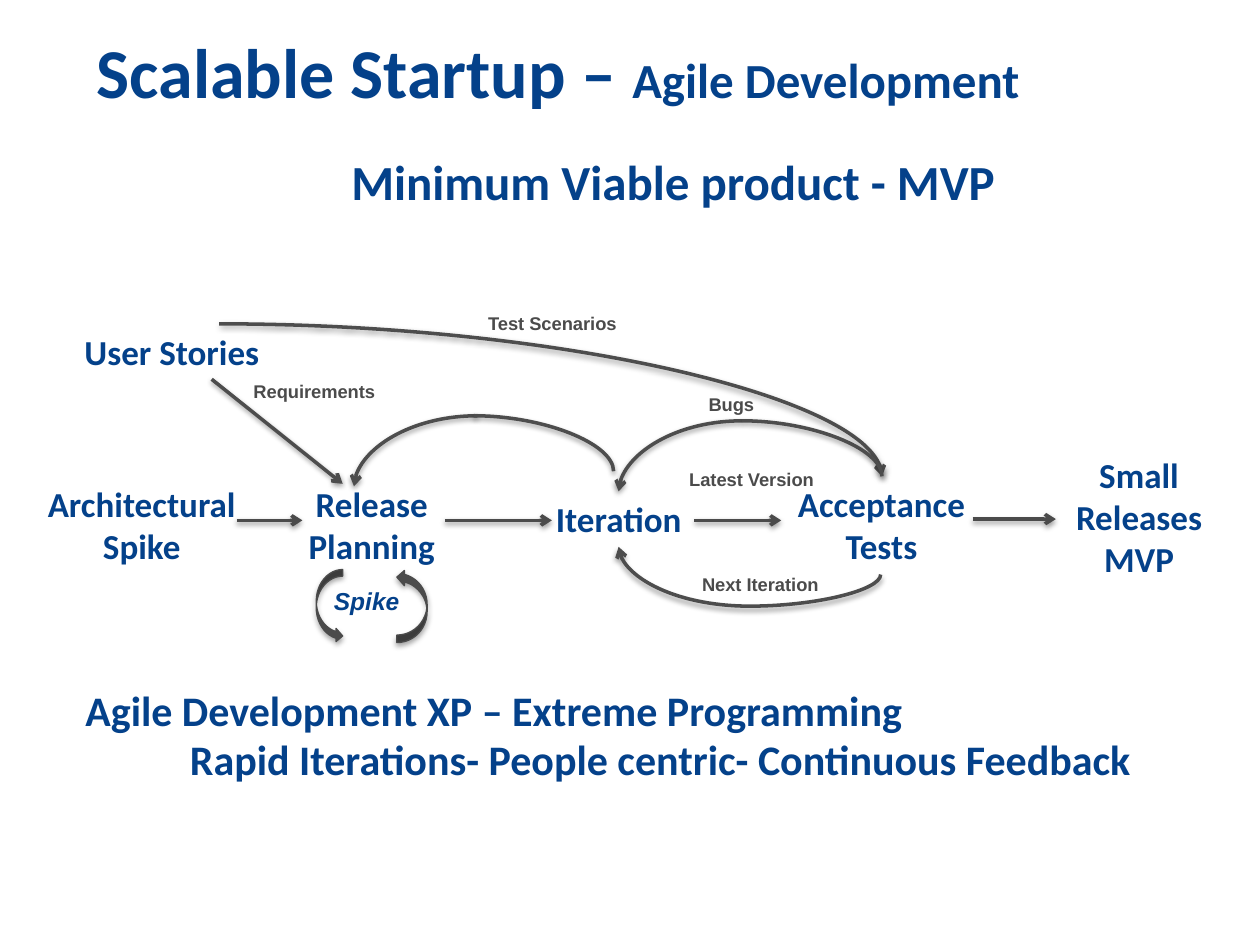
import pptx
import pptx.util
import pptx.dml.color
import pptx.enum.shapes
import pptx.enum.text
import pptx.oxml
import pptx.oxml.ns

Inches, Pt = pptx.util.Inches, pptx.util.Pt
RGB = pptx.dml.color.RGBColor.from_string
SHAPE = pptx.enum.shapes.MSO_SHAPE
LINK = pptx.enum.shapes.MSO_CONNECTOR
ALIGN = pptx.enum.text.PP_ALIGN
ANCHOR = pptx.enum.text.MSO_ANCHOR

HUES = {"blue": "04418A", "gray": "4B4B4B", "line": "4D4D4D", "shade": "000000"}
STEP = {"name": "Calibri", "size": Pt(20), "bold": True}
SPIKE = {"name": "Arial", "size": Pt(14), "bold": True, "italic": True}
NOTE = {"name": "Arial", "size": Pt(10.5), "bold": True}

deck = pptx.Presentation()
deck.slide_width, deck.slide_height = Inches(10), Inches(7.5)
slide = deck.slides.add_slide(deck.slide_layouts[6])
shapes = slide.shapes


def write(para, text, form, hue):
    run = para.add_run()
    run.text = text
    for key, value in form.items():
        setattr(run.font, key, value)
    run.font.color.rgb = RGB(HUES[hue])


def shade(shape, alpha, dist):
    """Give a shape or connector a soft shadow that falls straight down."""
    shape._element.spPr.append(pptx.oxml.parse_xml(
        f'<a:effectLst {pptx.oxml.ns.nsdecls("a")}>'
        f'<a:outerShdw blurRad="{Pt(3.1)}" dist="{Pt(dist)}" dir="5400000" rotWithShape="0">'
        f'<a:srgbClr val="{HUES["shade"]}"><a:alpha val="{alpha * 1000}"/></a:srgbClr>'
        '</a:outerShdw></a:effectLst>'))


# Loop arrows around the spike
for kind, x, y, w, h, turn in [
    (SHAPE.CURVED_UP_ARROW, 2.98, 4.69, 0.58, 0.24, 270),
    (SHAPE.CURVED_RIGHT_ARROW, 2.51, 4.52, 0.21, 0.58, 0),
]:
    loop = shapes.add_shape(kind, Inches(x), Inches(y), Inches(w), Inches(h))
    loop.rotation = turn
    loop.fill.solid()
    loop.fill.fore_color.rgb = RGB(HUES["gray"])
    loop.line.color.rgb = RGB(HUES["gray"])
    loop.line.width = Pt(0.75)
    shade(loop, 35, 1.8)

# Straight and curved links: kind, start, end, hue, arrowhead
bend = "curvedConnector2"
for kind, x1, y1, x2, y2, hue, head in [
    ("line", 1.68, 3.01, 2.72, 3.84, "line", True),
    ("line", 1.88, 4.13, 2.4, 4.13, "gray", True),
    ("line", 3.53, 4.13, 4.38, 4.13, "gray", True),
    ("line", 5.51, 4.13, 6.2, 4.13, "gray", True),
    ("line", 7.72, 4.12, 8.38, 4.12, "gray", True),
    ("curvedConnector3", 6.06, 3.41, 5.84, 5.49, "line", True),
    (bend, 1.74, 2.57, 7, 3.78, "line", True),
    (bend, 5.89, 3.34, 4.91, 3.9, "line", True),
    (bend, 5.89, 3.34, 7, 3.78, "line", False),
    (bend, 3.79, 3.3, 2.81, 3.86, "line", True),
    (bend, 3.76, 3.3, 4.87, 3.74, "line", False),
]:
    form = LINK.STRAIGHT if kind == "line" else LINK.CURVE
    link = shapes.add_connector(form, Inches(x1), Inches(y1), Inches(x2), Inches(y2))
    link.line.color.rgb = RGB(HUES[hue])
    link.line.width = Pt(2)
    prop = link._element.spPr
    prop.prstGeom.set("prst", kind)
    if kind == "curvedConnector3":
        # A quarter turn makes the curve hang below both of its ends
        prop.xfrm.set("rot", "5400000")
        guide = prop.prstGeom.get_or_add_avLst()._add_gd()
        guide.set("name", "adj1")
        guide.set("fmla", "val -114000")
    if head:
        prop.find(pptx.oxml.ns.qn("a:ln")).append(pptx.oxml.parse_xml(
            f'<a:tailEnd {pptx.oxml.ns.nsdecls("a")} type="arrow"/>'))
    shade(link, 38, 1.6)

# Steps and notes
for lines, x, y, w, h, form, hue in [
    (["Small Releases", "MVP"], 8.33, 3.55, 1.42, 1.51, STEP, "blue"),
    (["User Stories"], 0.33, 2.57, 2.07, 0.44, STEP, "blue"),
    (["Architectural Spike"], 0.25, 3.78, 1.75, 0.77, STEP, "blue"),
    (["Release Planning"], 2.24, 3.78, 1.42, 0.77, STEP, "blue"),
    (["Iteration"], 4.2, 3.9, 1.42, 0.44, STEP, "blue"),
    (["Acceptance Tests"], 6.2, 3.78, 1.59, 0.77, STEP, "blue"),
    (["Spike"], 2.45, 4.6, 0.92, 0.34, SPIKE, "blue"),
    (["Requirements"], 1.67, 2.97, 1.65, 0.28, NOTE, "gray"),
    (["Test Scenarios"], 3.56, 2.43, 1.65, 0.28, NOTE, "gray"),
    (["Bugs"], 5.42, 3.07, 0.77, 0.28, NOTE, "gray"),
    (["Latest Version"], 5.14, 3.67, 1.65, 0.28, NOTE, "gray"),
    (["Next Iteration"], 5.21, 4.5, 1.65, 0.28, NOTE, "gray"),
]:
    frame = shapes.add_textbox(Inches(x), Inches(y), Inches(w), Inches(h)).text_frame
    frame.word_wrap = True
    for i, text in enumerate(lines):
        para = frame.add_paragraph() if i else frame.paragraphs[0]
        para.alignment = ALIGN.CENTER
        write(para, text, form, hue)

# Title and closing lines: place, then runs, indent and space before per line
for x, y, lines in [
    (0.67, 0.5, [
        ([("Scalable Startup – ", 40), ("Agile Development", 28)], 0, 0),
        ([("Minimum Viable product - MVP", 28)], 2.02, 28),
    ]),
    (0.58, 5.25, [
        ([("Agile Development XP – Extreme Programming", 24)], 0, 0),
        ([("Rapid Iterations- People centric- Continuous Feedback", 24)], 0.83, 0),
    ]),
]:
    frame = shapes.add_textbox(Inches(x), Inches(y), Inches(9), Inches(1.17)).text_frame
    frame.word_wrap = True
    frame.vertical_anchor = ANCHOR.MIDDLE
    for i, (runs, left, gap) in enumerate(lines):
        para = frame.add_paragraph() if i else frame.paragraphs[0]
        para.line_spacing = Pt(28)
        if gap:
            para.space_before = Pt(gap)
        if left:
            para._p.get_or_add_pPr().set("marL", str(Inches(left)))
        for text, size in runs:
            write(para, text, {**STEP, "size": Pt(size)}, "blue")

deck.save("out.pptx")
